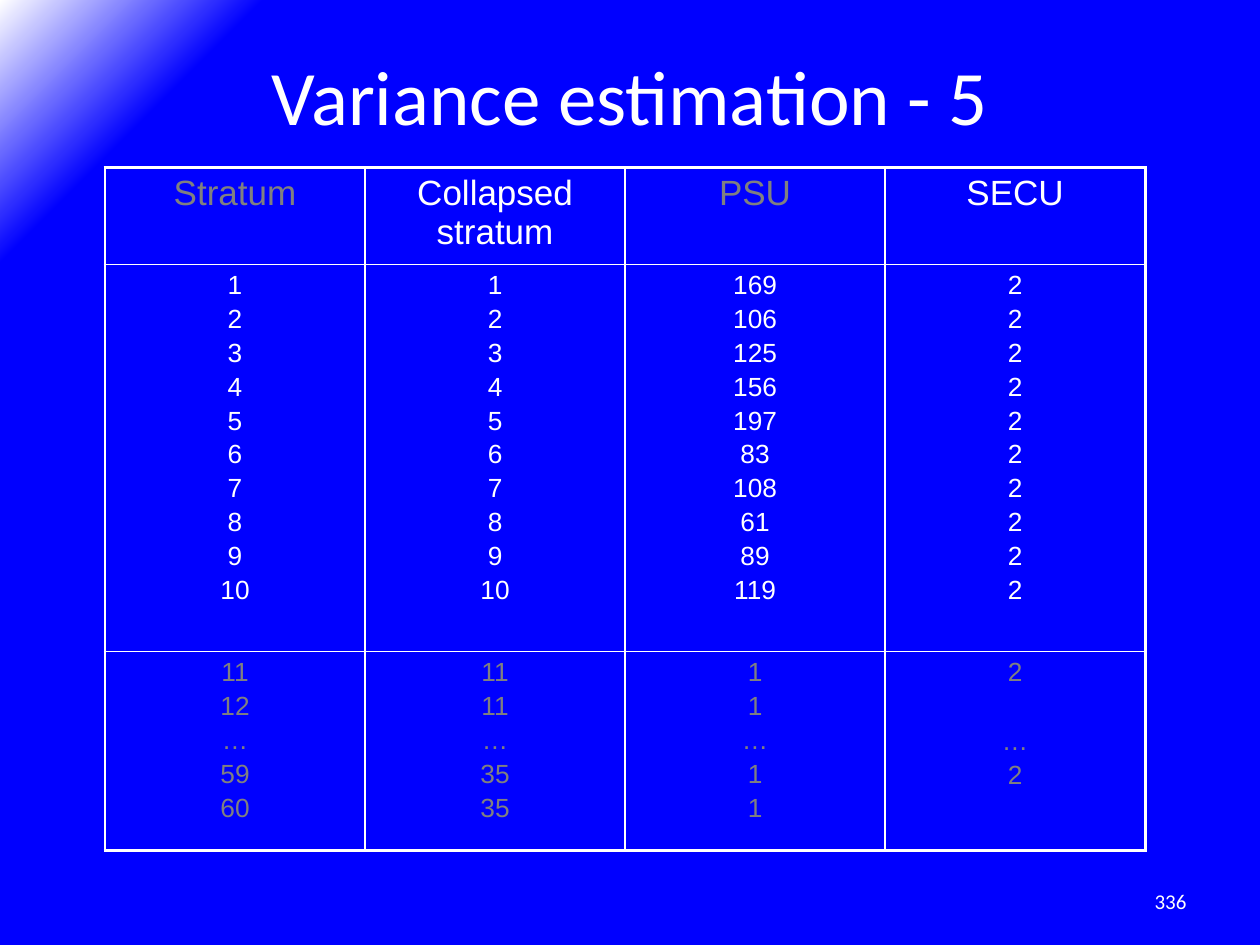
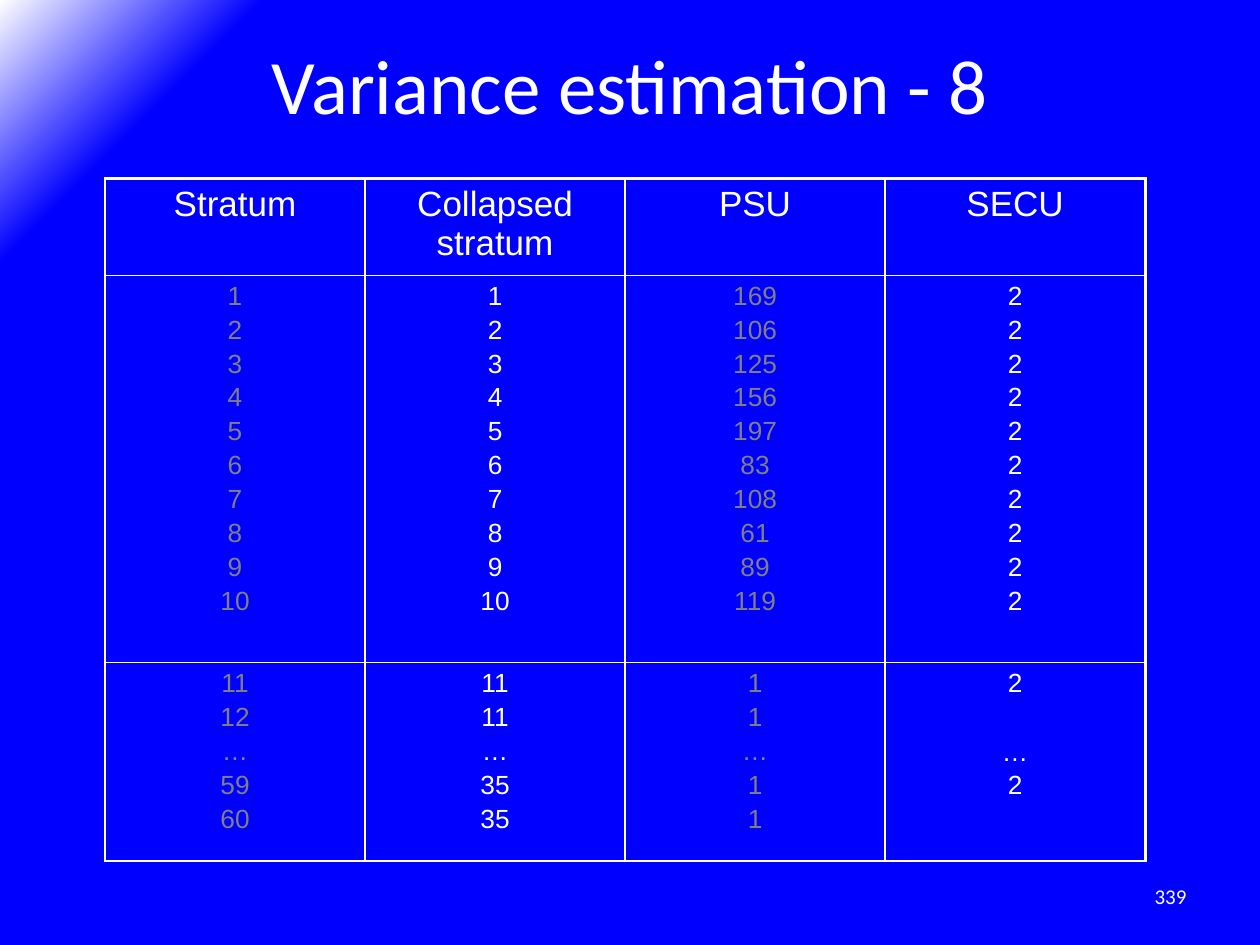
import dataclasses

import lxml.etree
import pptx
import pptx.dml.color
import pptx.enum.text
import pptx.oxml
import pptx.oxml.ns
import pptx.util
from pptx.util import Cm, Pt

ALIGN = pptx.enum.text.PP_ALIGN
ANCHOR = pptx.enum.text.MSO_ANCHOR


@dataclasses.dataclass(frozen=True)
class Theme:
    background: str = "0000FF"
    glow: str = "FFFFFF"
    text: str = "FFFFFF"
    muted: str = "808080"
    rule: str = "FFFFFF"
    heading_font: str = "Calibri"
    table_font: str = "Arial"
    title_size: float = 52.8
    header_size: float = 24
    body_size: float = 18
    number_size: float = 14.4
    outer_rule: float = 2.25
    inner_rule: float = 1
    line_height: float = 20.7
    line_gap: float = 3.06


@dataclasses.dataclass(frozen=True)
class Box:
    """A region of the slide, in centimetres."""
    left: float
    top: float
    width: float
    height: float

    def emu(self):
        return Cm(self.left), Cm(self.top), Cm(self.width), Cm(self.height)


THEME = Theme()
SLIDE_WIDTH, SLIDE_HEIGHT = 30.48, 22.86
ROW_SHARES = (2.34, 9.37, 4.8)
CELL_MARGIN_X, CELL_MARGIN_Y = 0.3, 0.15

HEADERS = ("Stratum", "Collapsed stratum", "PSU", "SECU")
ONE_TO_TEN = [str(number) for number in range(1, 11)]
PSU_COUNTS = ["169", "106", "125", "156", "197", "83", "108", "61", "89", "119"]
# None leaves its line free.
STRATA_ROWS = (
    [[header] for header in HEADERS],
    [ONE_TO_TEN, ONE_TO_TEN, PSU_COUNTS, ["2"] * 10],
    [
        ["11", "12", "…", "59", "60"],
        ["11", "11", "…", "35", "35"],
        ["1", "1", "…", "1", "1"],
        ["2", None, "…", "2"],
    ],
)


def write_text(frame, lines, *, font, size, color, align, anchor=ANCHOR.TOP, gap=0.0):
    """Write one paragraph per line; a None line widens the gap before the next."""
    frame.word_wrap = True
    frame.vertical_anchor = anchor
    space_before = 0
    first = True
    for line in lines:
        if line is None:
            space_before += THEME.line_height + gap
            continue
        paragraph = frame.paragraphs[0] if first else frame.add_paragraph()
        first = False
        paragraph.alignment = align
        paragraph.space_before = Pt(space_before)
        run = paragraph.add_run()
        run.text = line
        run.font.name = font
        run.font.size = Pt(size)
        run.font.bold = False
        run.font.color.rgb = pptx.dml.color.RGBColor.from_string(color)
        space_before = gap


def set_margins(target):
    target.margin_left = target.margin_right = Cm(CELL_MARGIN_X)
    target.margin_top = target.margin_bottom = Cm(CELL_MARGIN_Y)


def paint_background(master):
    """Give the master a radial gradient that lights the top left corner."""
    fill = master.background.fill
    fill.solid()
    solid = master.element.find(".//" + pptx.oxml.ns.qn("p:bgPr"))[0]
    stops = ((0, THEME.background), (88, THEME.background), (100, THEME.glow))
    stop_xml = "".join(
        f'<a:gs pos="{position * 1000}"><a:srgbClr val="{color}"/></a:gs>'
        for position, color in stops
    )
    gradient = pptx.oxml.parse_xml(
        f'<a:gradFill {pptx.oxml.ns.nsdecls("a")} rotWithShape="1">'
        f"<a:gsLst>{stop_xml}</a:gsLst>"
        '<a:path path="circle"><a:fillToRect l="100000" t="100000"/></a:path>'
        "</a:gradFill>"
    )
    solid.getparent().replace(solid, gradient)


def add_title(slide, box, text):
    title = slide.shapes.title
    title.left, title.top, title.width, title.height = box.emu()
    frame = title.text_frame
    frame.auto_size = pptx.enum.text.MSO_AUTO_SIZE.NONE
    set_margins(frame)
    write_text(frame, [text], font=THEME.heading_font, size=THEME.title_size,
               color=THEME.text, align=ALIGN.CENTER)


def add_page_number(slide, box, number):
    frame = slide.shapes.add_textbox(*box.emu()).text_frame
    write_text(frame, [number], font=THEME.heading_font, size=THEME.number_size,
               color=THEME.text, align=ALIGN.RIGHT, anchor=ANCHOR.MIDDLE)


def set_borders(cell, outer_sides):
    """Rule all four sides of a cell, the outer ones heavier."""
    properties = cell._tc.get_or_add_tcPr()
    for index, side in enumerate("LRTB"):
        width = THEME.outer_rule if side in outer_sides else THEME.inner_rule
        line = lxml.etree.Element(pptx.oxml.ns.qn(f"a:ln{side}"), w=str(Pt(width)))
        solid = lxml.etree.SubElement(line, pptx.oxml.ns.qn("a:solidFill"))
        lxml.etree.SubElement(solid, pptx.oxml.ns.qn("a:srgbClr"), val=THEME.rule)
        properties.insert(index, line)


def add_strata_table(slide, box, muted_columns):
    """Add the table; muted_columns lists the greyed columns of each row."""
    row_count, column_count = len(STRATA_ROWS), len(HEADERS)
    table = slide.shapes.add_table(row_count, column_count, *box.emu()).table
    table.first_row = table.horz_banding = False
    for column in table.columns:
        column.width = Cm(box.width / column_count)
    for row, share in zip(table.rows, ROW_SHARES):
        row.height = Cm(box.height * share / sum(ROW_SHARES))

    for row_index, row_lines in enumerate(STRATA_ROWS):
        size = THEME.body_size if row_index else THEME.header_size
        for column_index, lines in enumerate(row_lines):
            cell = table.cell(row_index, column_index)
            cell.fill.background()
            set_margins(cell)
            is_muted = column_index in muted_columns[row_index]
            write_text(cell.text_frame, lines, font=THEME.table_font, size=size,
                       color=THEME.muted if is_muted else THEME.text,
                       align=ALIGN.CENTER, gap=THEME.line_gap)
            edges = {"L": column_index == 0, "R": column_index == column_count - 1,
                     "T": row_index == 0, "B": row_index == row_count - 1}
            set_borders(cell, [side for side, is_outer in edges.items() if is_outer])


def add_variance_slide(deck, *, step, number, title_top, table_top, number_top,
                       muted_columns):
    slide = deck.slides.add_slide(deck.slide_layouts.get_by_name("Title Only"))
    add_page_number(slide, Box(21.84, number_top, 7.11, 1.22), number)
    add_strata_table(slide, Box(2.54, table_top, 25.16, sum(ROW_SHARES)), muted_columns)
    add_title(slide, Box(1.52, title_top, 27.43, 3.81), f"Variance estimation - {step}")


def main():
    deck = pptx.Presentation()
    deck.slide_width, deck.slide_height = Cm(SLIDE_WIDTH), Cm(SLIDE_HEIGHT)
    paint_background(deck.slide_master)
    add_variance_slide(deck, step=5, number="336", title_top=1.02, table_top=4.06,
                       number_top=21.18, muted_columns=((0, 2), (), (0, 1, 2, 3)))
    add_variance_slide(deck, step=8, number="339", title_top=0.76, table_top=4.32,
                       number_top=21.08, muted_columns=((), (0, 2), (0, 2)))
    deck.save("out.pptx")


if __name__ == "__main__":
    main()
